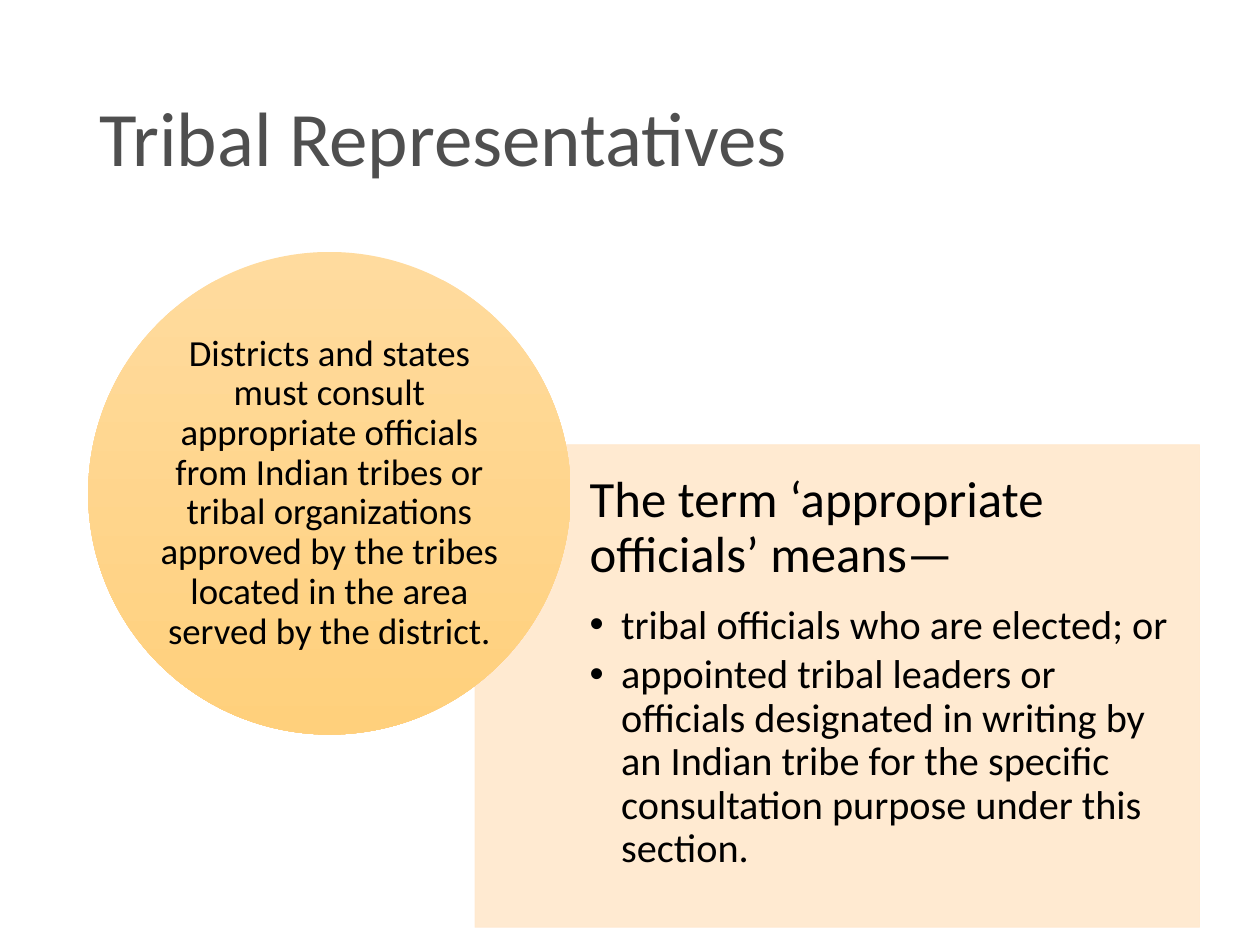
"""Build the Tribal Representatives slide with a definition panel and a circle."""
import lxml.etree
import pptx
import pptx.dml.color
import pptx.enum.shapes
import pptx.enum.text
import pptx.oxml
import pptx.oxml.ns
import pptx.util

Inches = pptx.util.Inches
Pt = pptx.util.Pt
RGBColor = pptx.dml.color.RGBColor
SHAPES = pptx.enum.shapes.MSO_SHAPE
ALIGN = pptx.enum.text.PP_ALIGN
ANCHOR = pptx.enum.text.MSO_ANCHOR
qn = pptx.oxml.ns.qn

GRAY = RGBColor(0x4F, 0x4F, 0x4F)
BLACK = RGBColor(0, 0, 0)
PEACH = RGBColor(0xFF, 0xE8, 0xCC)
GOLD_LIGHT = RGBColor(0xFF, 0xDB, 0x9E)
GOLD_DARK = RGBColor(0xFF, 0xD0, 0x7C)
FONT = "Calibri"
DIAMETER = Inches(3.83)


def format_paragraph(para, size, color, align=ALIGN.LEFT, space_after=0):
    para.alignment = align
    para.line_spacing = 0.9
    para.space_before = Pt(0)
    para.space_after = Pt(space_after)
    for span in para.runs:
        span.font.name = FONT
        span.font.size = Pt(size)
        span.font.color.rgb = color


def prepare_frame(shape, anchor, left, top, right, bottom):
    frame = shape.text_frame
    frame.word_wrap = True
    frame.auto_size = pptx.enum.text.MSO_AUTO_SIZE.NONE
    frame.vertical_anchor = anchor
    frame.margin_left, frame.margin_top = Inches(left), Inches(top)
    frame.margin_right, frame.margin_bottom = Inches(right), Inches(bottom)
    return frame


deck = pptx.Presentation()
deck.slide_width = Inches(10)
deck.slide_height = Inches(7.5)
page = deck.slides.add_slide(deck.slide_layouts[5])

title = page.shapes.title
title.left, title.top = Inches(0.69), Inches(0.4)
title.width, title.height = Inches(8.62), Inches(1.45)
title_frame = prepare_frame(title, ANCHOR.MIDDLE, 0.1, 0.05, 0.1, 0.05)
title_frame.text = "Tribal Representatives"
format_paragraph(title_frame.paragraphs[0], 44, GRAY)

panel = page.shapes.add_shape(
    SHAPES.RECTANGLE, Inches(3.77), Inches(3.53), Inches(5.75), DIAMETER
)
panel.shadow.inherit = False
panel.fill.solid()
panel.fill.fore_color.rgb = PEACH
panel.line.color.rgb = PEACH
panel.line.width = Pt(0.5)
for color in panel._element.spPr.iter(qn("a:srgbClr")):
    lxml.etree.SubElement(color, qn("a:alpha"), val="90000")

panel_frame = prepare_frame(panel, ANCHOR.TOP, 0.91, 0.23, 0.23, 0.23)
panel_frame.text = "The term ‘appropriate officials’ means—"
format_paragraph(panel_frame.paragraphs[0], 29, BLACK, space_after=12)

definitions = [
    "tribal officials who are elected; or",
    "appointed tribal leaders or officials designated in writing by an Indian "
    "tribe for the specific consultation purpose under this section.",
]
for definition in definitions:
    para = panel_frame.add_paragraph()
    para.text = definition
    para.level = 1
    properties = para._p.get_or_add_pPr()
    properties.set("marL", str(Inches(0.25)))
    properties.set("indent", str(Inches(-0.25)))
    lxml.etree.SubElement(properties, qn("a:buFont"), typeface="Arial")
    lxml.etree.SubElement(properties, qn("a:buChar"), char="•")
    format_paragraph(para, 23, BLACK, space_after=3.5)

circle = page.shapes.add_shape(
    SHAPES.OVAL, Inches(0.7), Inches(2), DIAMETER, DIAMETER
)
circle.shadow.inherit = False
circle.line.fill.background()
circle.fill.gradient()
circle.fill.gradient_angle = 270
for stop, color in zip(circle.fill.gradient_stops, (GOLD_LIGHT, GOLD_DARK)):
    stop.color.rgb = color

circle_frame = prepare_frame(circle, ANCHOR.MIDDLE, 0, 0, 0, 0)
circle_frame.text = (
    "Districts and states must consult appropriate officials from Indian tribes "
    "or tribal organizations approved by the tribes located in the area served "
    "by the district."
)
format_paragraph(circle_frame.paragraphs[0], 21, BLACK, ALIGN.CENTER)

deck.save("out.pptx")
